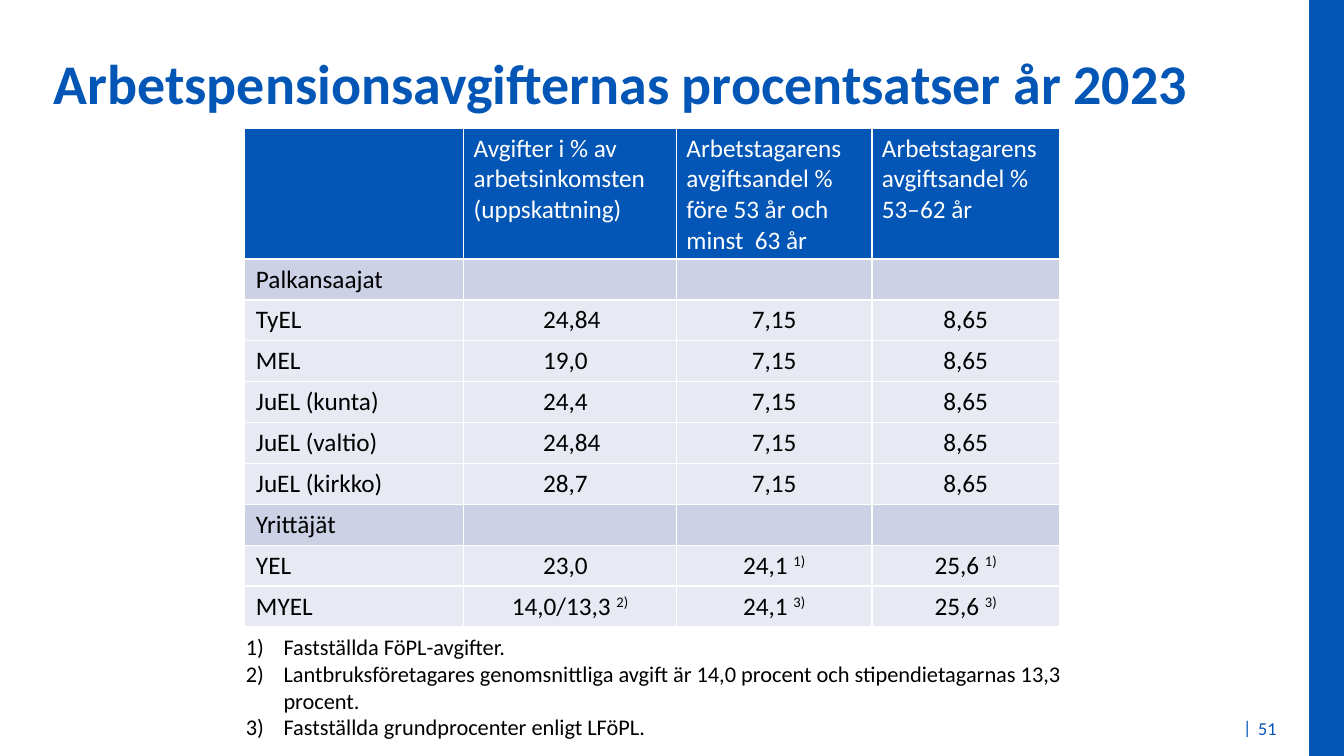
"""Build the slide on earnings-related pension contribution rates for 2023."""
from dataclasses import dataclass

from lxml.etree import SubElement
from pptx import Presentation
from pptx.dml.color import RGBColor
from pptx.enum.shapes import MSO_SHAPE
from pptx.enum.text import MSO_ANCHOR, PP_ALIGN
from pptx.oxml.ns import qn
from pptx.util import Inches, Pt

SLIDE_WIDTH, SLIDE_HEIGHT = Inches(13.33), Inches(7.5)
FONT = "Calibri"
BLUE, WHITE, BLACK = "0356B5", "FFFFFF", "000000"
GROUP_FILL, ROW_FILL = "CCD1E5", "E7E9F3"
COLUMN_WIDTHS = (16.35, 15.83, 14.55, 13.95)
HEADER_HEIGHT, ROW_HEIGHT = 17.33, 5.41
NUMBER_INDENT, LABEL_INDENT = 5.92, 0.9
NOTE_INDENT = 2.81
HEADERS = (
    "",
    "Avgifter i % av arbetsinkomsten (uppskattning)",
    "Arbetstagarens avgiftsandel %\nföre 53 år och minst  63 år",
    "Arbetstagarens avgiftsandel %\n53–62 år",
)
NOTES = (
    "Fastställda FöPL-avgifter.\n"
    "Lantbruksföretagares genomsnittliga avgift är 14,0 procent och stipendietagarnas 13,3 procent.\n"
    "Fastställda grundprocenter enligt LFöPL."
)


@dataclass(frozen=True)
class Area:
    """A rectangle in percent of the slide's width and height."""

    left: float
    top: float
    width: float
    height: float

    def lengths(self) -> tuple:
        """Return left, top, width and height as slide lengths."""
        return across(self.left), down(self.top), across(self.width), down(self.height)


@dataclass(frozen=True)
class RateRow:
    """One table row; a caret starts a superscript note mark."""

    label: str
    total: str = ""
    younger: str = "7,15"
    older: str = "8,65"
    is_group: bool = False

    def texts(self) -> tuple:
        """Return the four cell texts."""
        if self.is_group:
            return self.label, "", "", ""
        return self.label, self.total, self.younger, self.older


RATE_ROWS = (
    RateRow("Palkansaajat", is_group=True),
    RateRow("TyEL", "24,84"),
    RateRow("MEL", "19,0"),
    RateRow("JuEL (kunta)", "24,4"),
    RateRow("JuEL (valtio)", "24,84"),
    RateRow("JuEL (kirkko)", "28,7"),
    RateRow("Yrittäjät", is_group=True),
    RateRow("YEL", "23,0", "24,1 ^1)", "25,6 ^1)"),
    RateRow("MYEL", "14,0/13,3 ^2)", "24,1 ^3)", "25,6 ^3)"),
)


def across(percent: float) -> int:
    """Turn a share of the slide's width into a length."""
    return int(SLIDE_WIDTH * percent / 100)


def down(percent: float) -> int:
    """Turn a share of the slide's height into a length."""
    return int(SLIDE_HEIGHT * percent / 100)


def hex_color(value: str) -> RGBColor:
    """Turn a hex string into a colour."""
    return RGBColor.from_string(value)


def number_paragraph(paragraph) -> None:
    """Give a paragraph a hanging automatic number."""
    properties = paragraph._p.get_or_add_pPr()
    properties.set("marL", str(across(NOTE_INDENT)))
    properties.set("indent", str(-across(NOTE_INDENT)))
    SubElement(properties, qn("a:buFont"), typeface="+mj-lt")
    SubElement(properties, qn("a:buAutoNum"), type="arabicParenR")


def write_text(frame, text: str, *, size: float = 18, color: str = BLACK, bold: bool = False,
               align: PP_ALIGN = PP_ALIGN.LEFT, numbered: bool = False) -> None:
    """Write lines as paragraphs, raising whatever follows a caret."""
    for index, line in enumerate(text.split("\n")):
        paragraph = frame.add_paragraph() if index else frame.paragraphs[0]
        paragraph.alignment = align
        if numbered:
            number_paragraph(paragraph)
        base, _, mark = line.partition("^")
        for part, baseline in ((base, 0), (mark, 30000)):
            if not part:
                continue
            run = paragraph.add_run()
            run.text = part
            run.font.name, run.font.size, run.font.bold = FONT, Pt(size), bold
            run.font.color.rgb = hex_color(color)
            if baseline:
                run._r.get_or_add_rPr().set("baseline", str(baseline))


def add_text(slide, area: Area, text: str, *, wrap: bool = True,
             anchor: MSO_ANCHOR = MSO_ANCHOR.TOP, **text_format) -> None:
    """Add a text box."""
    frame = slide.shapes.add_textbox(*area.lengths()).text_frame
    frame.word_wrap, frame.vertical_anchor = wrap, anchor
    write_text(frame, text, **text_format)


def add_side_bar(slide, area: Area) -> None:
    """Add the plain coloured bar."""
    shape = slide.shapes.add_shape(MSO_SHAPE.RECTANGLE, *area.lengths())
    shape.shadow.inherit = False
    shape.fill.solid()
    shape.fill.fore_color.rgb = hex_color(BLUE)
    shape.line.fill.background()


def paint_cell(cell, fill: str) -> None:
    """Give a cell thin white borders and a fill."""
    properties = cell._tc.get_or_add_tcPr()
    for side in ("lnL", "lnR", "lnT", "lnB"):
        border = SubElement(properties, qn(f"a:{side}"), w=str(Pt(1)))
        SubElement(SubElement(border, qn("a:solidFill")), qn("a:srgbClr"), val=WHITE)
    cell.fill.solid()
    cell.fill.fore_color.rgb = hex_color(fill)


def fill_rate_cell(cell, column: int, text: str, fill: str) -> None:
    """Paint a body cell and align its text by column."""
    paint_cell(cell, fill)
    centred = column > 1 or "^" in text
    if column == 0:
        cell.margin_left = across(LABEL_INDENT)
    elif text and not centred:
        cell.margin_left = across(NUMBER_INDENT)
    write_text(cell.text_frame, text, align=PP_ALIGN.CENTER if centred else PP_ALIGN.LEFT)


def add_rate_table(slide, left: float, top: float) -> None:
    """Add the table of contribution rates."""
    heights = (HEADER_HEIGHT, *[ROW_HEIGHT] * len(RATE_ROWS))
    area = Area(left, top, sum(COLUMN_WIDTHS), sum(heights))
    table = slide.shapes.add_table(len(heights), len(COLUMN_WIDTHS), *area.lengths()).table
    table.horz_banding = False
    for column, width in zip(table.columns, COLUMN_WIDTHS):
        column.width = across(width)
    for row, height in zip(table.rows, heights):
        row.height = down(height)
    for column, header in enumerate(HEADERS):
        paint_cell(table.cell(0, column), BLUE)
        write_text(table.cell(0, column).text_frame, header, color=WHITE)
    for index, rate_row in enumerate(RATE_ROWS, start=1):
        fill = GROUP_FILL if rate_row.is_group else ROW_FILL
        for column, text in enumerate(rate_row.texts()):
            fill_rate_cell(table.cell(index, column), column, text, fill)


def main() -> None:
    """Build and save the presentation."""
    presentation = Presentation()
    presentation.slide_width, presentation.slide_height = SLIDE_WIDTH, SLIDE_HEIGHT
    slide = presentation.slides.add_slide(presentation.slide_layouts[6])
    add_side_bar(slide, Area(97.4, 0, 2.6, 100))
    add_text(slide, Area(91.75, 94.13, 2.18, 4.67), "|", wrap=False, size=13, color=BLUE)
    add_text(slide, Area(0.98, 5.2, 90.4, 11.2), "Arbetspensionsavgifternas procentsatser år 2023",
             anchor=MSO_ANCHOR.MIDDLE, size=40, color=BLUE, bold=True, align=PP_ALIGN.CENTER)
    add_text(slide, Area(92.87, 94, 3.3, 4.67), "51", anchor=MSO_ANCHOR.MIDDLE, size=13, color=BLUE)
    add_text(slide, Area(17.55, 83.07, 64.97, 15.73), NOTES, size=16, numbered=True)
    add_rate_table(slide, 18.15, 16.93)
    presentation.save("out.pptx")


if __name__ == "__main__":
    main()
